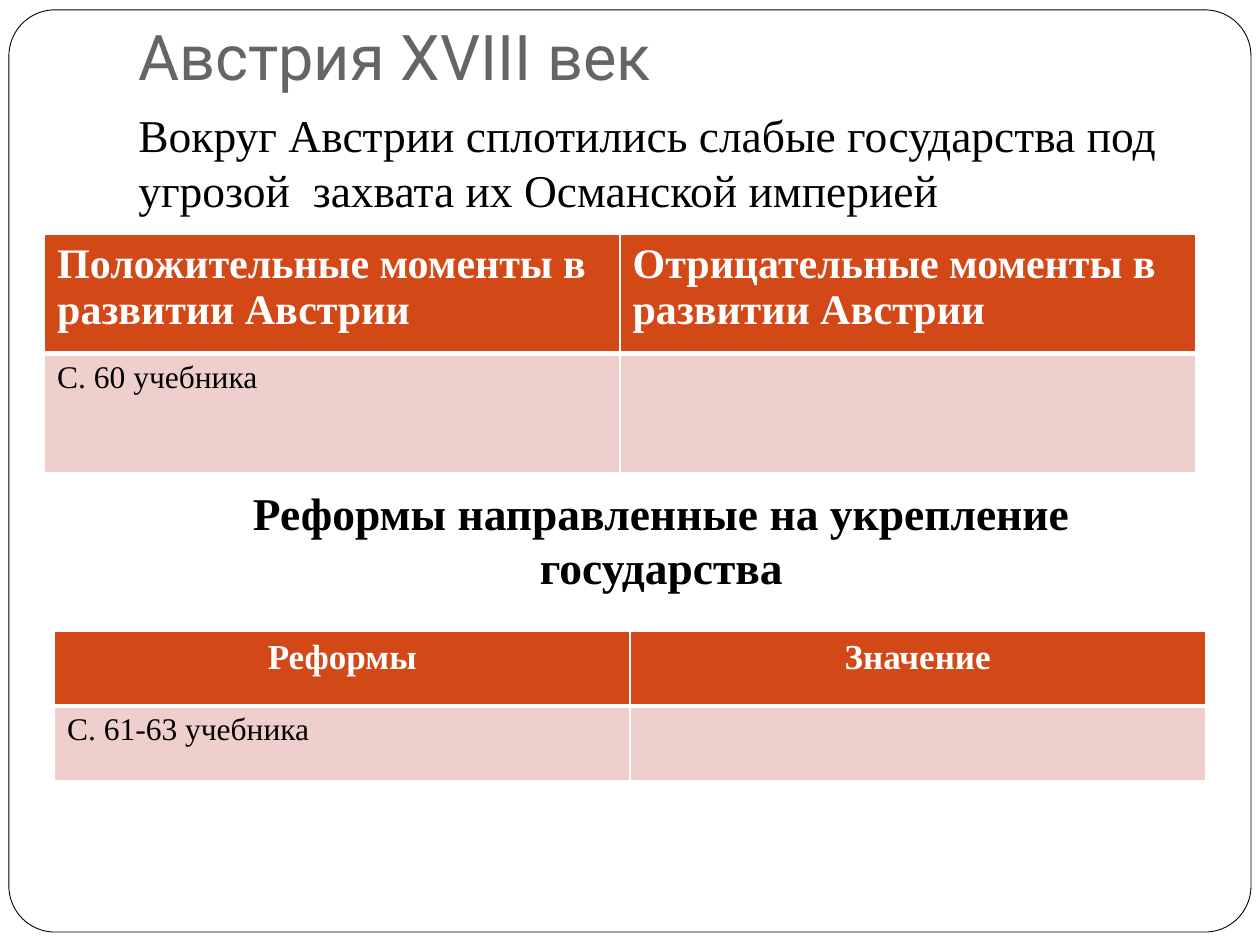
from lxml import etree
from pptx import Presentation
from pptx.dml.color import RGBColor
from pptx.enum.shapes import MSO_SHAPE
from pptx.enum.text import MSO_ANCHOR, PP_ALIGN
from pptx.oxml.ns import qn
from pptx.util import Cm, Pt

ROUNDED = MSO_SHAPE.ROUNDED_RECTANGLE
TOP, BOTTOM = MSO_ANCHOR.TOP, MSO_ANCHOR.BOTTOM
LEFT, CENTER = PP_ALIGN.LEFT, PP_ALIGN.CENTER
SERIF, SANS = "Times New Roman", "Roboto"
COLORS = {
    "white": "FFFFFF",
    "black": "000000",
    "title": "696464",
    "header": "D34817",
    "body": "EFCFCC",
}


def style_paragraph(paragraph, size, color, bold=False, align=LEFT, font=SERIF):
    paragraph.alignment = align
    paragraph.font.name = font
    paragraph.font.size = Pt(size)
    paragraph.font.bold = bold
    paragraph.font.color.rgb = RGBColor.from_string(COLORS[color])


def add_cell_borders(cell, widths):
    """Draw white borders; widths maps L, R, T and B, in that order, to points."""
    properties = cell._tc.get_or_add_tcPr()
    for side, width in widths.items():
        line = etree.SubElement(properties, qn(f"a:ln{side}"), w=str(Pt(width)))
        fill = etree.SubElement(line, qn("a:solidFill"))
        etree.SubElement(fill, qn("a:srgbClr"), val=COLORS["white"])


presentation = Presentation()
presentation.slide_width = Cm(25.4)
presentation.slide_height = Cm(19.05)
slide = presentation.slides.add_slide(presentation.slide_layouts[6])

frame = slide.shapes.add_shape(ROUNDED, Cm(0.18), Cm(0.2), Cm(25.04), Cm(18.59))
frame.adjustments[0] = 0.05
frame.shadow.inherit = False
frame.fill.solid()
frame.fill.fore_color.rgb = RGBColor.from_string(COLORS["white"])
frame.line.color.rgb = RGBColor.from_string(COLORS["black"])
frame.line.width = Pt(0.5)

# text, top, height, anchor, bottom inset, size, color, bold, align, font
texts = [
    ("Австрия XVIII век", 0.76, 1.37, BOTTOM, 0.25,
     36, "title", False, LEFT, SANS),
    ("Вокруг Австрии сплотились слабые государства под угрозой  захвата их "
     "Османской империей", 2.04, 2.5, TOP, 0.13,
     26, "black", False, LEFT, SERIF),
    ("Реформы направленные на укрепление государства", 9.65, 2.5, TOP, 0.13,
     26, "black", True, CENTER, SERIF),
]
for text, top, height, anchor, inset, size, color, bold, align, font in texts:
    text_box = slide.shapes.add_textbox(Cm(2.54), Cm(top), Cm(21.59), Cm(height))
    text_frame = text_box.text_frame
    text_frame.word_wrap = True
    text_frame.vertical_anchor = anchor
    text_frame.margin_bottom = Cm(inset)
    text_frame.text = text
    style_paragraph(text_frame.paragraphs[0], size, color, bold, align, font)

# left, top, row height, header size, header alignment, rows
tables = [
    (0.9, 4.73, 2.4, 24, LEFT, [
        ["Положительные моменты в развитии Австрии",
         "Отрицательные моменты в развитии Австрии"],
        ["С. 60 учебника", ""],
    ]),
    (1.1, 12.73, 1.5, 20, CENTER, [
        ["Реформы", "Значение"],
        ["С. 61-63 учебника", ""],
    ]),
]
for left, top, row_height, header_size, header_align, rows in tables:
    table = slide.shapes.add_table(
        len(rows), 2, Cm(left), Cm(top), Cm(23.2), Cm(row_height * len(rows))
    ).table
    for row_index, row in enumerate(rows):
        is_header = row_index == 0
        table.rows[row_index].height = Cm(row_height)
        for column_index, text in enumerate(row):
            cell = table.cell(row_index, column_index)
            cell.text = text
            paragraph = cell.text_frame.paragraphs[0]
            if is_header:
                style_paragraph(paragraph, header_size, "white", True, header_align)
                add_cell_borders(cell, {"L": 1, "R": 1, "T": 1, "B": 3})
            else:
                style_paragraph(paragraph, 18, "black")
                add_cell_borders(cell, {"L": 1, "R": 1, "T": 3, "B": 1})
            cell.fill.solid()
            cell.fill.fore_color.rgb = RGBColor.from_string(
                COLORS["header" if is_header else "body"])

presentation.save("out.pptx")
